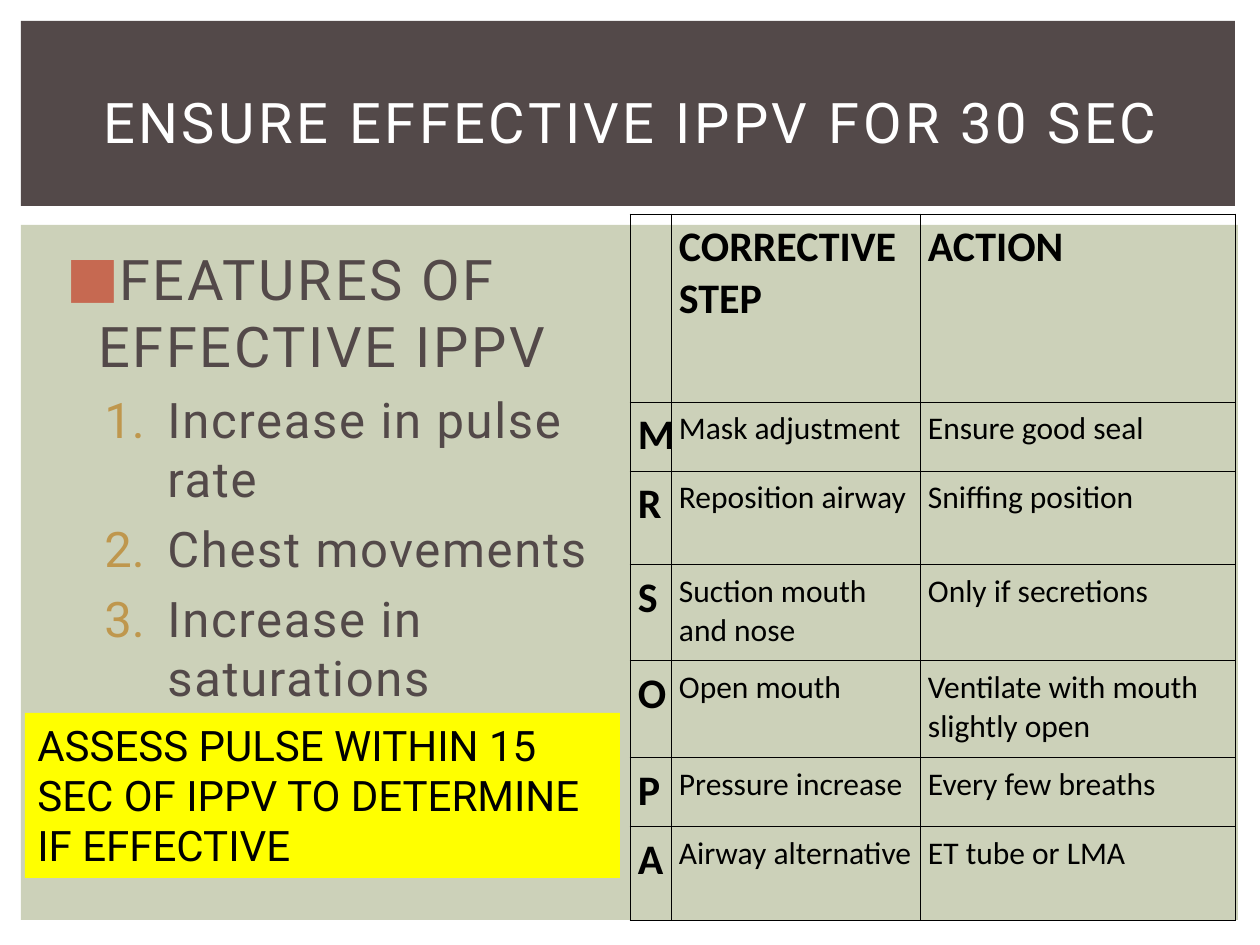
from dataclasses import dataclass

from lxml.etree import SubElement
from pptx import Presentation
from pptx.dml.color import RGBColor
from pptx.enum.shapes import MSO_SHAPE
from pptx.enum.text import MSO_ANCHOR, PP_ALIGN
from pptx.oxml.ns import qn
from pptx.util import Emu, Pt

PX = 914400 / 126


@dataclass(frozen=True)
class Theme:
    panel: str = "CCD1B9"
    dark: str = "534949"
    white: str = "FFFFFF"
    black: str = "000000"
    highlight: str = "FFFF00"
    square: str = "C66951"
    number: str = "BF974D"
    font: str = "Roboto"
    table_font: str = "Calibri"
    heading_size: int = 32
    item_size: int = 28
    strong_size: int = 24
    cell_size: int = 18


THEME = Theme()
STEPS = [
    ("", "CORRECTIVE STEP", "ACTION"),
    ("M", "Mask adjustment", "Ensure good seal"),
    ("R", "Reposition airway", "Sniffing position"),
    ("S", "Suction mouth and nose", "Only if secretions"),
    ("O", "Open mouth", "Ventilate with mouth slightly open"),
    ("P", "Pressure increase", "Every few breaths"),
    ("A", "Airway alternative", "ET tube or LMA"),
]
COLUMN_WIDTHS = [41, 249, 315]
ROW_HEIGHTS = [188, 69, 94, 96, 97, 69, 94]
FEATURES = ["Increase in pulse rate", "Chest movements", "Increase in saturations"]


def px(length):
    return Emu(round(length * PX))


def color(value):
    return RGBColor.from_string(value)


def add_block(page, box, fill):
    block = page.shapes.add_shape(MSO_SHAPE.RECTANGLE, *map(px, box))
    block.shadow.inherit = False
    block.fill.solid()
    block.fill.fore_color.rgb = color(fill)
    block.line.fill.background()
    return block


def add_text_box(page, box):
    frame = page.shapes.add_textbox(*map(px, box)).text_frame
    frame.word_wrap = True
    return frame


def write(para, text, size, ink, font=THEME.font, bold=False, tracking=0):
    span = para.add_run()
    span.text = text
    para.font.name = font
    para.font.size = Pt(size)
    para.font.bold = bold
    para.font.color.rgb = color(ink)
    if tracking:
        span.font._element.set("spc", str(round(tracking * 100)))


def set_bullet(para, left, hanging, ink, tag, **attributes):
    props = para._p.get_or_add_pPr()
    props.set("marL", str(px(left)))
    props.set("indent", str(-px(hanging)))
    SubElement(SubElement(props, qn("a:buClr")), qn("a:srgbClr")).set("val", ink)
    SubElement(props, qn("a:buFont")).set("typeface", THEME.font)
    SubElement(props, qn(tag), attributes)


def add_title(page, box):
    left, top, width, height = box
    add_block(page, box, THEME.dark)
    frame = add_text_box(page, (left + 32, top + 28, width - 59, height - 40))
    frame.vertical_anchor = MSO_ANCHOR.MIDDLE
    para = frame.paragraphs[0]
    para.alignment = PP_ALIGN.CENTER
    write(para, "ENSURE EFFECTIVE IPPV FOR 30 SEC", THEME.heading_size, THEME.white, tracking=2)


def add_features(page, box):
    frame = add_text_box(page, box)
    heading = frame.paragraphs[0]
    set_bullet(heading, 38, 32, THEME.square, "a:buChar", char="■")
    write(heading, "FEATURES OF EFFECTIVE IPPV", THEME.heading_size, THEME.dark, tracking=1.5)
    for feature in FEATURES:
        para = frame.add_paragraph()
        para.level = 1
        set_bullet(para, 107, 63, THEME.number, "a:buAutoNum", type="arabicPeriod")
        para.space_before = Pt(6.4)
        write(para, feature, THEME.item_size, THEME.dark, tracking=1)


def add_border(cell):
    props = cell._tc.get_or_add_tcPr()
    for side in ("a:lnL", "a:lnR", "a:lnT", "a:lnB"):
        line = SubElement(props, qn(side), w=str(Pt(0.5)))
        fill = SubElement(line, qn("a:solidFill"))
        SubElement(fill, qn("a:srgbClr")).set("val", THEME.black)


def add_steps_table(page, left, top):
    box = (left, top, sum(COLUMN_WIDTHS), sum(ROW_HEIGHTS))
    table = page.shapes.add_table(len(STEPS), len(COLUMN_WIDTHS), *map(px, box)).table
    table.first_row = table.horz_banding = False
    for column, width in zip(table.columns, COLUMN_WIDTHS):
        column.width = px(width)
    for row_index, (row, height, texts) in enumerate(zip(table.rows, ROW_HEIGHTS, STEPS)):
        row.height = px(height)
        for column_index, (cell, text) in enumerate(zip(row.cells, texts)):
            cell.margin_left = cell.margin_right = px(8)
            cell.margin_top = cell.margin_bottom = px(8)
            add_border(cell)
            cell.fill.background()
            if text:
                strong = row_index == 0 or column_index == 0
                size = THEME.strong_size if strong else THEME.cell_size
                write(cell.text_frame.paragraphs[0], text, size, THEME.black, THEME.table_font, strong)


def add_reminder(page, box):
    frame = add_block(page, box, THEME.highlight).text_frame
    frame.word_wrap = True
    frame.vertical_anchor = MSO_ANCHOR.TOP
    para = frame.paragraphs[0]
    para.alignment = PP_ALIGN.LEFT
    write(para, "ASSESS PULSE WITHIN 15 SEC OF IPPV TO DETERMINE IF EFFECTIVE",
          THEME.strong_size, THEME.black)


def main():
    deck = Presentation()
    deck.slide_width, deck.slide_height = px(1260), px(945)
    page = deck.slides.add_slide(deck.slide_layouts[6])
    # Background panel and title band
    add_block(page, (21, 225, 1217, 695), THEME.panel)
    add_title(page, (21, 21, 1214, 185))
    # Left: signs of effective ventilation; right: corrective steps
    add_features(page, (48, 238, 577, 607))
    add_steps_table(page, 630, 214)
    # Highlighted reminder
    add_reminder(page, (25, 713, 595, 165))
    deck.save("out.pptx")


if __name__ == "__main__":
    main()
